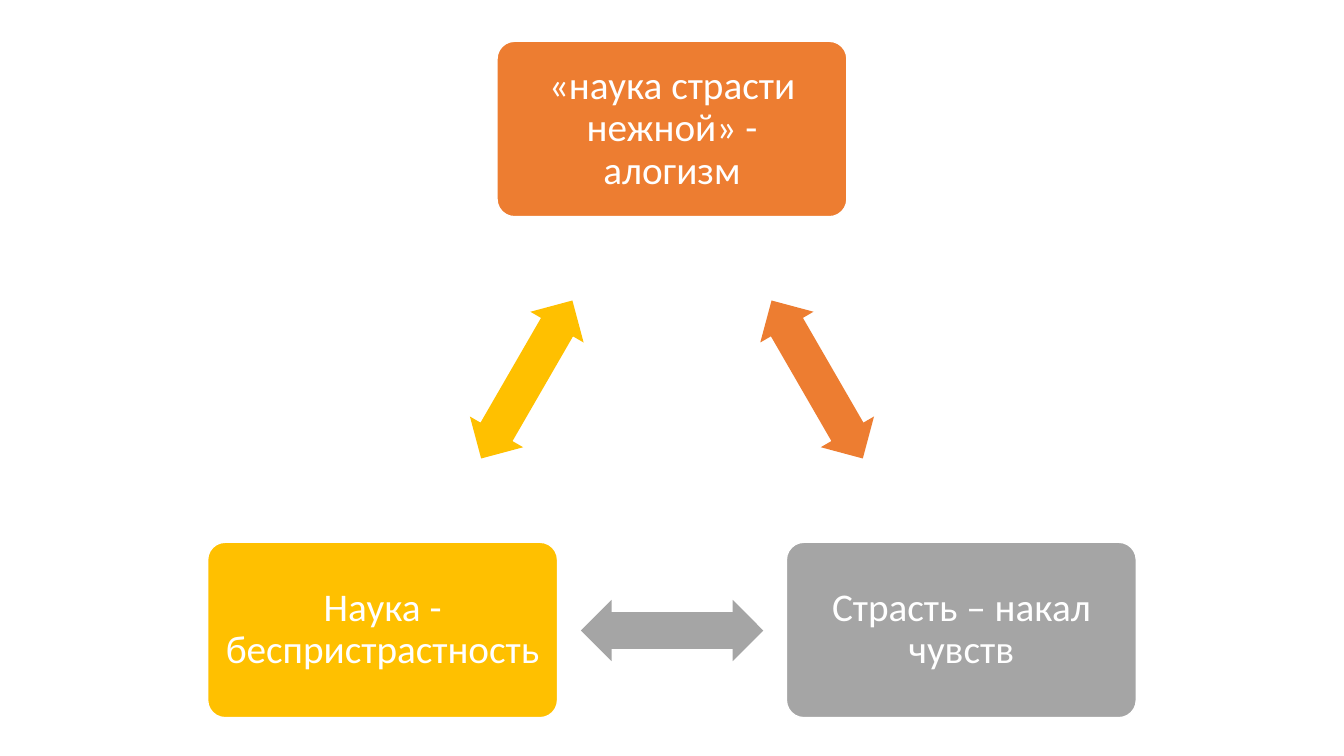
from dataclasses import dataclass

import pptx
import pptx.dml.color
import pptx.enum.shapes
import pptx.enum.text
import pptx.util

Inches = pptx.util.Inches
Pt = pptx.util.Pt
Shapes = pptx.enum.shapes.MSO_SHAPE

COLORS = {
    "orange": "ED7D31",
    "gray": "A5A5A5",
    "gold": "FFC000",
    "white": "FFFFFF",
}
CARD_WIDTH, CARD_HEIGHT = 3.47, 1.74
ARROW_WIDTH, ARROW_HEIGHT = 1.81, 0.61
CARD_INSET = 0.12


@dataclass
class Card:
    text: str
    left: float
    top: float
    color: str


@dataclass
class Arrow:
    left: float
    top: float
    rotation: float
    color: str


CARDS = [
    Card("«наука страсти нежной» - алогизм", 4.93, 0.41, "orange"),
    Card("Страсть – накал чувств", 7.8, 5.38, "gray"),
    Card("Наука - беспристрастность", 2.06, 5.38, "gold"),
]
ARROWS = [
    Arrow(7.2, 3.46, 60, "orange"),
    Arrow(5.76, 5.95, 180, "gray"),
    Arrow(4.32, 3.46, 300, "gold"),
]


def rgb(name: str) -> pptx.dml.color.RGBColor:
    return pptx.dml.color.RGBColor.from_string(COLORS[name])


def add_filled_shape(slide, kind, left: float, top: float, width: float, height: float, color: str):
    shape = slide.shapes.add_shape(kind, Inches(left), Inches(top), Inches(width), Inches(height))
    shape.shadow.inherit = False
    shape.fill.solid()
    shape.fill.fore_color.rgb = rgb(color)
    return shape


def draw_card(slide, card: Card) -> None:
    shape = add_filled_shape(
        slide, Shapes.ROUNDED_RECTANGLE, card.left, card.top, CARD_WIDTH, CARD_HEIGHT, card.color
    )
    shape.adjustments[0] = 0.1
    shape.line.color.rgb = rgb("white")
    shape.line.width = Pt(1)

    text_frame = shape.text_frame
    text_frame.text = card.text
    text_frame.word_wrap = True
    text_frame.vertical_anchor = pptx.enum.text.MSO_ANCHOR.MIDDLE
    text_frame.margin_left = text_frame.margin_right = Inches(CARD_INSET)
    text_frame.margin_top = text_frame.margin_bottom = Inches(CARD_INSET)

    paragraph = text_frame.paragraphs[0]
    paragraph.alignment = pptx.enum.text.PP_ALIGN.CENTER
    paragraph.line_spacing = 0.9
    font = paragraph.runs[0].font
    font.name = "Calibri"
    font.size = Pt(28)
    font.color.rgb = rgb("white")


def draw_arrow(slide, arrow: Arrow) -> None:
    shape = add_filled_shape(
        slide, Shapes.LEFT_RIGHT_ARROW, arrow.left, arrow.top, ARROW_WIDTH, ARROW_HEIGHT, arrow.color
    )
    shape.adjustments[0] = 0.6
    shape.adjustments[1] = 0.5
    shape.line.fill.background()
    shape.rotation = arrow.rotation


def main() -> None:
    presentation = pptx.Presentation()
    presentation.slide_width = Inches(13.33)
    presentation.slide_height = Inches(7.5)
    slide = presentation.slides.add_slide(presentation.slide_layouts.get_by_name("Blank"))
    for card, arrow in zip(CARDS, ARROWS):
        draw_card(slide, card)
        draw_arrow(slide, arrow)
    presentation.save("out.pptx")


if __name__ == "__main__":
    main()
